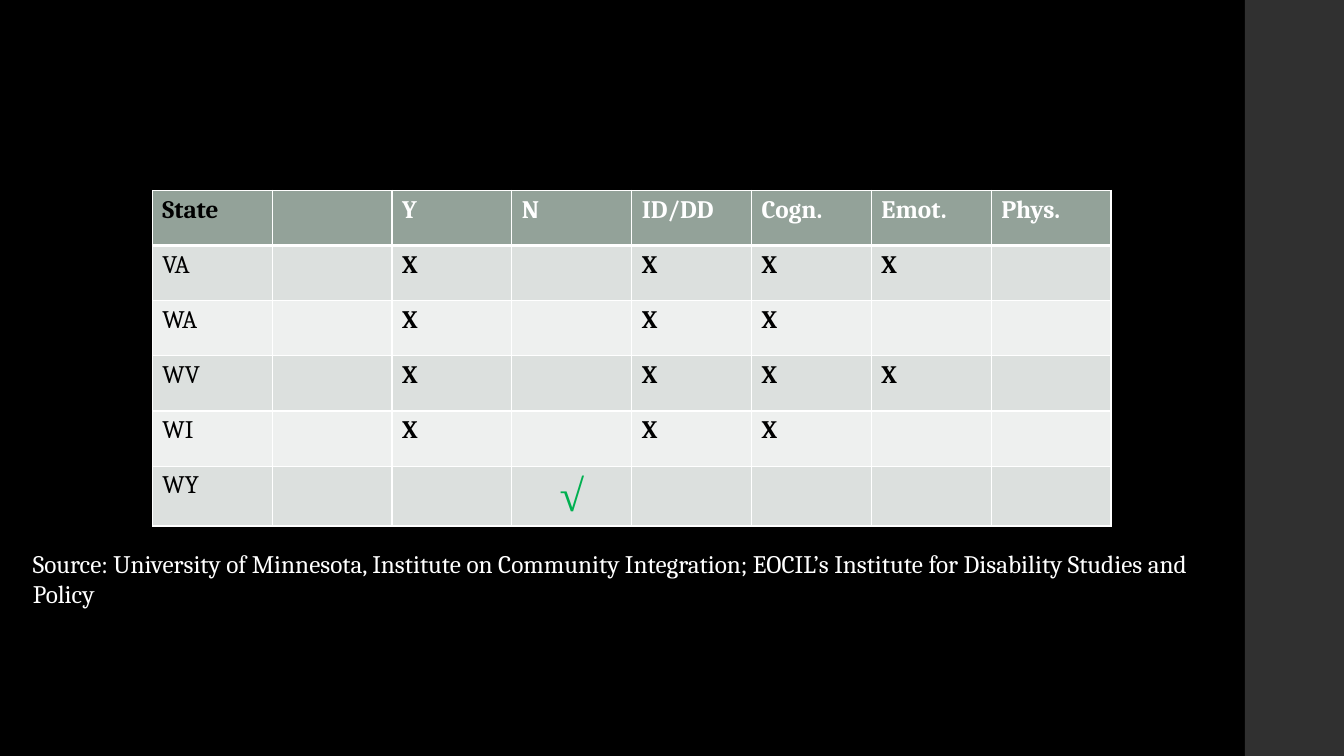
from lxml import etree
from pptx import Presentation
from pptx.dml.color import RGBColor
from pptx.enum.shapes import MSO_SHAPE
from pptx.enum.text import MSO_ANCHOR, PP_ALIGN
from pptx.oxml.ns import qn
from pptx.util import Cm, Pt

RECTANGLE = MSO_SHAPE.RECTANGLE
MIDDLE = MSO_ANCHOR.MIDDLE
LEFT, CENTER = PP_ALIGN.LEFT, PP_ALIGN.CENTER

# Content
HEADER = ["State", "", "Y", "N", "ID/DD", "Cogn.", "Emot.", "Phys."]
STATES = [
    ["VA", "", "X", "", "X", "X", "X", ""],
    ["WA", "", "X", "", "X", "X", "", ""],
    ["WV", "", "X", "", "X", "X", "X", ""],
    ["WI", "", "X", "", "X", "X", "", ""],
    ["WY", "", "", "√", "", "", "", ""],
]
SOURCE = ("Source: University of Minnesota, Institute on Community Integration; "
          "EOCIL’s Institute for Disability Studies and Policy")

# Theme
THEME = {
    "black": "000000", "white": "FFFFFF", "side": "303030", "check": "00B050",
    "header": "93A299", "bands": ("DCE0DE", "EEF0EF"),
    "font": "Cambria", "check_font": "Times New Roman",
    "size": 18, "check_size": 32,
    "rule": 1, "header_rule": 3,
}

# Layout in centimetres
PAGE_WIDTH, PAGE_HEIGHT = 33.87, 19.05
TABLE_LEFT, TABLE_TOP = 3.84, 4.8
COLUMN_WIDTH, ROW_HEIGHT, LAST_ROW_HEIGHT = 3.02, 1.39, 1.51


def color(name):
    return RGBColor.from_string(name)


def paint(target, name):
    target.fill.solid()
    target.fill.fore_color.rgb = color(name)


def write(frame, text, ink, bold=False, size=THEME["size"], font=THEME["font"], align=LEFT):
    para = frame.paragraphs[0]
    para.alignment = align
    span = para.add_run()
    span.text = text
    for name, value in {"name": font, "size": Pt(size), "bold": bold}.items():
        setattr(span.font, name, value)
    span.font.color.rgb = color(ink)


def add_block(page, left, top, width, height, fill):
    box = page.shapes.add_shape(RECTANGLE, Cm(left), Cm(top), Cm(width), Cm(height))
    box.shadow.inherit = False
    paint(box, fill)
    box.line.fill.background()
    return box


def set_borders(cell, widths):
    properties = cell._tc.get_or_add_tcPr()
    for index, (side, width) in enumerate(widths.items()):
        line = etree.Element(qn(f"a:ln{side}"), w=str(Pt(width)))
        solid = etree.SubElement(line, qn("a:solidFill"))
        etree.SubElement(solid, qn("a:srgbClr"), val=THEME["white"])
        properties.insert(index, line)


def text_format(row, column, text):
    if text == "√":
        return {"ink": THEME["check"], "bold": True, "size": THEME["check_size"],
                "font": THEME["check_font"], "align": CENTER}
    is_header = row == 0
    return {"ink": THEME["white"] if is_header and column else THEME["black"],
            "bold": is_header or column > 0}


def add_state_table(page):
    rows = [HEADER] + STATES
    heights = [ROW_HEIGHT] * (len(rows) - 1) + [LAST_ROW_HEIGHT]
    table = page.shapes.add_table(
        len(rows), len(HEADER), Cm(TABLE_LEFT), Cm(TABLE_TOP),
        Cm(COLUMN_WIDTH * len(HEADER)), Cm(sum(heights))).table
    for column in table.columns:
        column.width = Cm(COLUMN_WIDTH)
    for row, (values, height) in enumerate(zip(rows, heights)):
        table.rows[row].height = Cm(height)
        fill = THEME["bands"][(row - 1) % 2] if row else THEME["header"]
        rule = THEME["rule"]
        top = THEME["header_rule"] if row == 1 else rule
        bottom = THEME["header_rule"] if row == 0 else rule
        for column, text in enumerate(values):
            cell = table.cell(row, column)
            paint(cell, fill)
            set_borders(cell, {"L": rule, "R": rule, "T": top, "B": bottom})
            if text:
                write(cell.text_frame, text, **text_format(row, column, text))


def main():
    deck = Presentation()
    deck.slide_width, deck.slide_height = Cm(PAGE_WIDTH), Cm(PAGE_HEIGHT)
    page = deck.slides.add_slide(deck.slide_layouts[6])
    paint(page.background, THEME["black"])

    # Side band
    add_block(page, 31.37, 0, 2.5, PAGE_HEIGHT, THEME["side"])

    # State table
    add_state_table(page)

    # Source note
    note = add_block(page, 0.58, 13.67, 30.63, 1.8, THEME["black"])
    note.line.color.rgb = color(THEME["black"])
    note.line.width = Pt(1.1)
    note.text_frame.word_wrap = True
    note.text_frame.vertical_anchor = MIDDLE
    write(note.text_frame, SOURCE, THEME["white"])

    deck.save("out.pptx")


if __name__ == "__main__":
    main()
